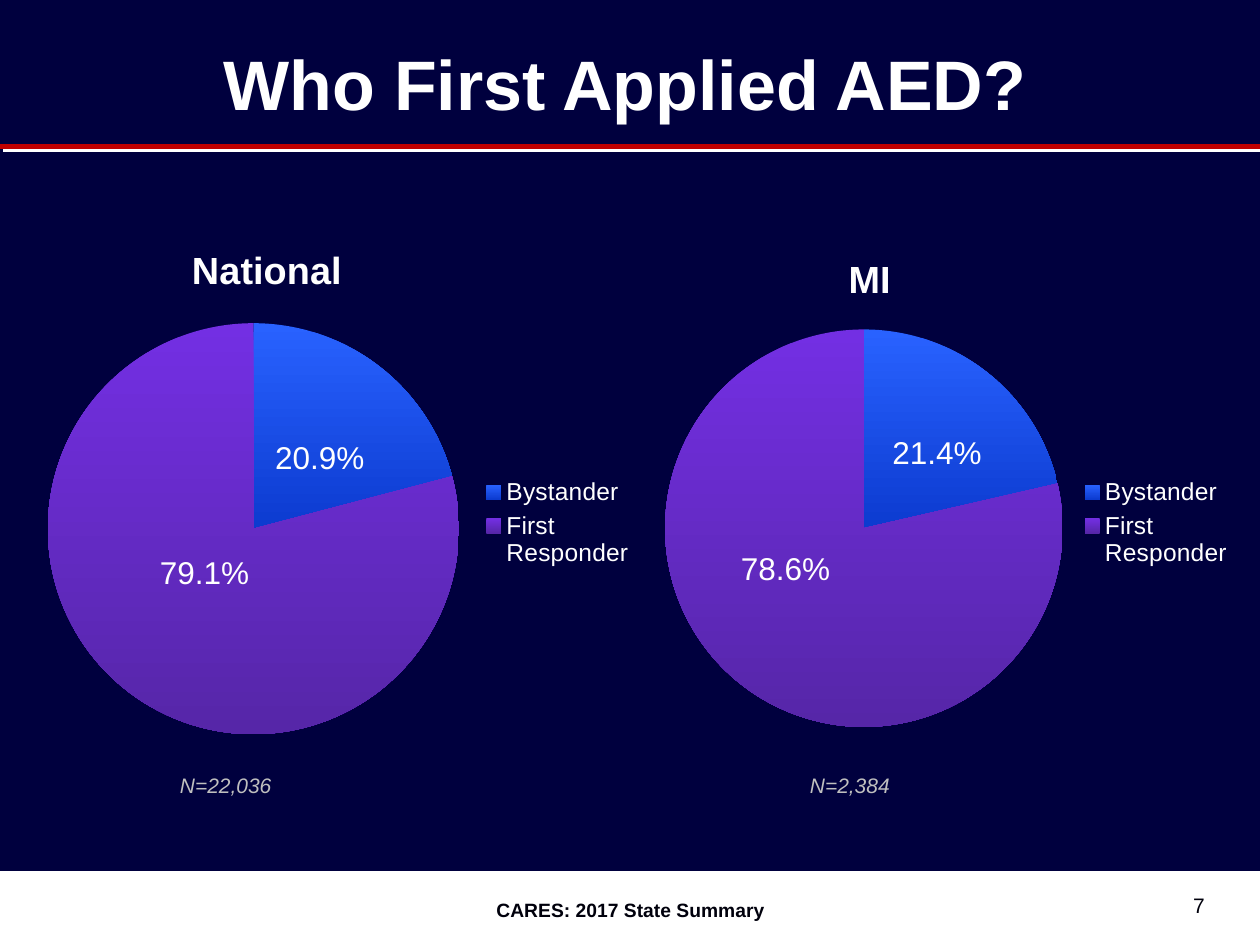
from lxml import etree
from pptx import Presentation
from pptx.chart.data import CategoryChartData
from pptx.dml.color import RGBColor
from pptx.enum.chart import XL_CHART_TYPE, XL_LABEL_POSITION, XL_LEGEND_POSITION
from pptx.enum.shapes import MSO_CONNECTOR, MSO_SHAPE
from pptx.enum.text import MSO_ANCHOR, PP_ALIGN
from pptx.oxml import parse_xml
from pptx.oxml.ns import nsdecls, qn
from pptx.util import Inches, Pt

NAVY = RGBColor(0x00, 0x00, 0x3E)
WHITE = RGBColor(0xFF, 0xFF, 0xFF)
INK = RGBColor(0x00, 0x00, 0x0C)
RED = RGBColor(0xC0, 0x00, 0x00)
GRAY = RGBColor(0xBF, 0xBF, 0xBF)
SLICE_GRADIENTS = [
    (RGBColor(0x29, 0x62, 0xFF), RGBColor(0x0C, 0x3B, 0xD0)),
    (RGBColor(0x73, 0x2F, 0xE3), RGBColor(0x56, 0x26, 0xA8)),
]
FONT = "Arial"


def add_text(slide, box, text, size, color, align=PP_ALIGN.LEFT,
             anchor=MSO_ANCHOR.TOP, bold=False, italic=False):
    tf = slide.shapes.add_textbox(*(Inches(v) for v in box)).text_frame
    tf.word_wrap = True
    tf.vertical_anchor = anchor
    p = tf.paragraphs[0]
    p.alignment = align
    r = p.add_run()
    r.text = text
    r.font.name = FONT
    r.font.size = Pt(size)
    r.font.bold = bold
    r.font.italic = italic
    r.font.color.rgb = color


def make_layout(**values):
    layout = parse_xml(f"<c:layout {nsdecls('c')}><c:manualLayout/></c:layout>")
    for tag, value in values.items():
        etree.SubElement(layout[0], qn(f"c:{tag}")).set("val", str(value))
    return layout


def place_after(anchor, layout):
    parent = anchor.getparent()
    for old in parent.findall(qn("c:layout")):
        parent.remove(old)
    anchor.addnext(layout)


def add_footer(slide, box):
    left, top, width, height = box
    s = slide.shapes.add_shape(MSO_SHAPE.RECTANGLE, *(Inches(v) for v in box))
    s.shadow.inherit = False
    s.fill.solid()
    s.fill.fore_color.rgb = WHITE
    s.line.color.rgb = WHITE
    s.line.width = Pt(0.75)
    add_text(slide, (left + 3.42, top + 0.16, 3.17, 0.29),
             "CARES: 2017 State Summary", 11, INK, PP_ALIGN.CENTER, bold=True)
    add_text(slide, (left + 7.33, top + 0.08, 2.33, 0.33),
             "7", 12, INK, PP_ALIGN.RIGHT, MSO_ANCHOR.BOTTOM)


def add_header(slide, box, rule_y):
    add_text(slide, box, "Who First Applied AED?", 40, WHITE,
             PP_ALIGN.CENTER, MSO_ANCHOR.MIDDLE, bold=True)
    rule = slide.shapes.add_connector(
        MSO_CONNECTOR.STRAIGHT, 0, Inches(rule_y), Inches(10), Inches(rule_y))
    rule.line.color.rgb = RED
    rule.line.width = Pt(3)
    rule.element.spPr.append(parse_xml(
        f'<a:effectLst {nsdecls("a")}>'
        f'<a:outerShdw dist="{Pt(2.8)}" dir="2700000" algn="ctr" rotWithShape="0">'
        f'<a:srgbClr val="{WHITE}"/></a:outerShdw></a:effectLst>'))


def add_pie(slide, box, title, values, title_x, legend_at, label_shifts):
    left, top, width, height = box
    data = CategoryChartData()
    data.categories = ["Bystander", "First Responder"]
    data.add_series("Series 1", values)
    chart = slide.shapes.add_chart(
        XL_CHART_TYPE.PIE, *(Inches(v) for v in box), data).chart
    chart.font.name = FONT
    chart.font.size = Pt(18)
    chart.font.color.rgb = WHITE

    chart.has_title = True
    r = chart.chart_title.text_frame.paragraphs[0].add_run()
    r.text = title
    r.font.name = FONT
    r.font.size = Pt(21.6)
    r.font.bold = True
    r.font.color.rgb = WHITE
    chart.has_legend = True
    legend = chart.legend
    legend.position = XL_LEGEND_POSITION.RIGHT
    legend.include_in_layout = False
    legend.font.name = FONT
    legend.font.size = Pt(14)
    legend.font.color.rgb = WHITE

    plot = chart.plots[0]
    plot.vary_by_categories = True
    series = plot.series[0]
    for i, (start, end) in enumerate(SLICE_GRADIENTS):
        point = series.points[i]
        fill = point.format.fill
        fill.gradient()
        fill.gradient_angle = 270
        for stop, color in zip(fill.gradient_stops, (start, end)):
            stop.color.rgb = color
        point.format.line.fill.background()
        point.data_label.position = XL_LABEL_POSITION.CENTER
    labels = series.data_labels
    labels.show_percentage = True
    labels.show_value = False
    labels.number_format = "0.0%"
    labels.number_format_is_linked = False

    root = chart.element
    for label, (dx, dy) in zip(root.iter(qn("c:dLbl")), label_shifts):
        label.find(qn("c:showVal")).set("val", "0")
        label.find(qn("c:showPercent")).set("val", "1")
        idx = label.find(qn("c:idx"))
        idx.addnext(parse_xml(
            f'<c:numFmt {nsdecls("c")} formatCode="0.0%" sourceLinked="0"/>'))
        place_after(idx, make_layout(x=dx / width, y=dy / height))
    place_after(root.find(f".//{qn('c:title')}/{qn('c:tx')}"),
                make_layout(xMode="edge", yMode="edge",
                            x=(title_x - left) / width, y=0.11))
    legend_x, legend_y = legend_at
    place_after(root.find(f".//{qn('c:legendPos')}"),
                make_layout(xMode="edge", yMode="edge",
                            x=(legend_x - left) / width,
                            y=(legend_y - top) / height,
                            w=1.25 / width, h=0.8 / height))
    area = root.find(f".//{qn('c:plotArea')}")
    for old in area.findall(qn("c:layout")):
        area.remove(old)
    area.insert(0, make_layout(layoutTarget="inner", xMode="edge", yMode="edge",
                               x=0.068, y=0.239, w=0.667, h=0.631))


def add_sample_size(slide, left, text):
    add_text(slide, (left, 6.08, 1.43, 0.3), text, 12, GRAY, italic=True)


def main():
    prs = Presentation()
    prs.slide_width, prs.slide_height = Inches(10), Inches(7.5)
    slide = prs.slides.add_slide(prs.slide_layouts[6])
    slide.background.fill.solid()
    slide.background.fill.fore_color.rgb = NAVY
    add_footer(slide, (0, 6.92, 10, 0.58))
    add_header(slide, (0.13, 0.03, 9.66, 1.25), 1.16)
    add_pie(slide, (4.58, 1.42, 5.67, 5), "MI", (21.4, 78.6), 6.68,
            (8.55, 3.75), [(0.09, 0.02), (-0.13, -0.29)])
    add_sample_size(slide, 6.33, "N=2,384")
    add_pie(slide, (-1, 1.33, 7.5, 5.17), "National", (20.9, 79.1), 1.47,
            (3.8, 3.75), [(0.03, 0.09), (0.11, -0.29)])
    add_sample_size(slide, 1.33, "N=22,036")
    prs.save("out.pptx")


if __name__ == "__main__":
    main()
